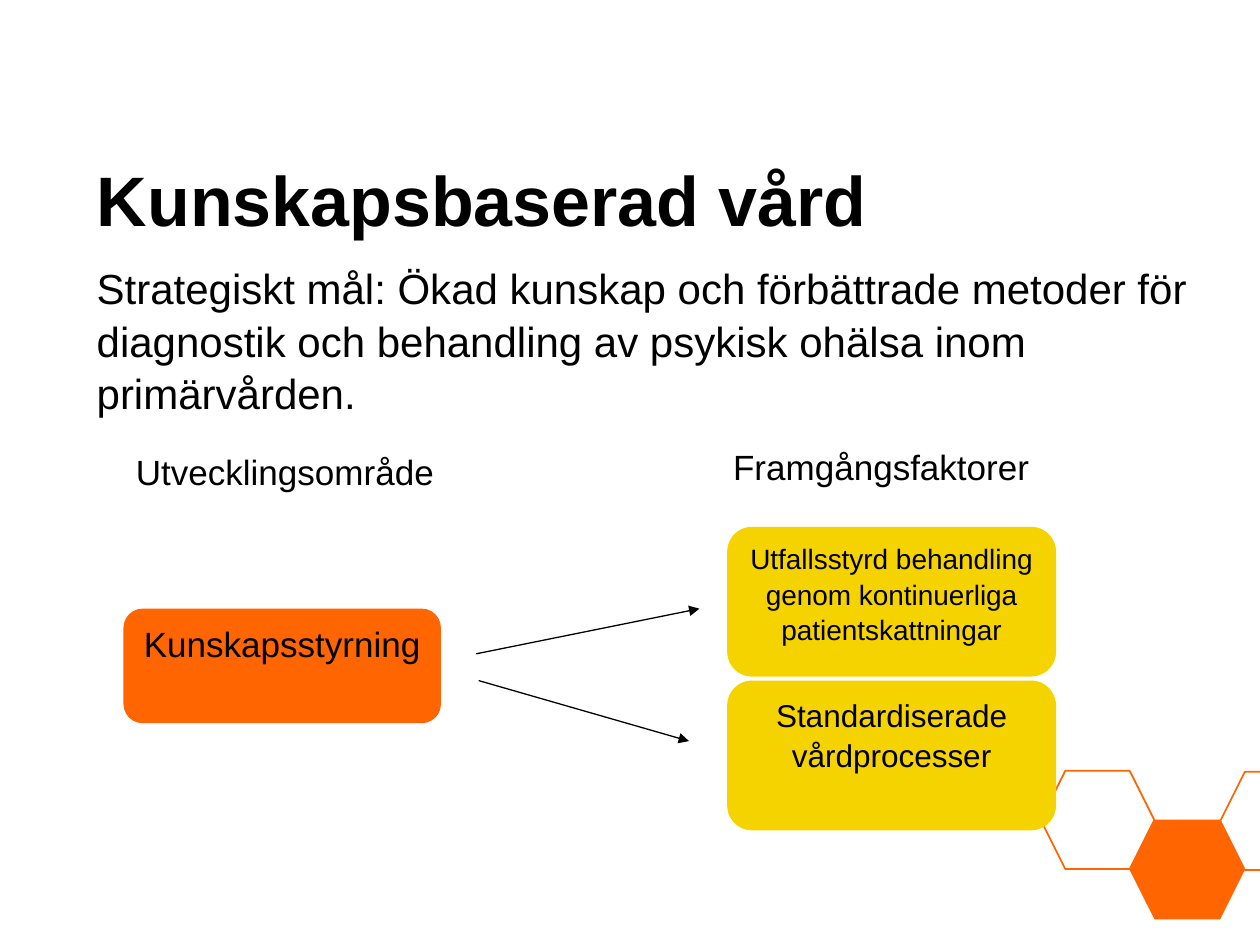
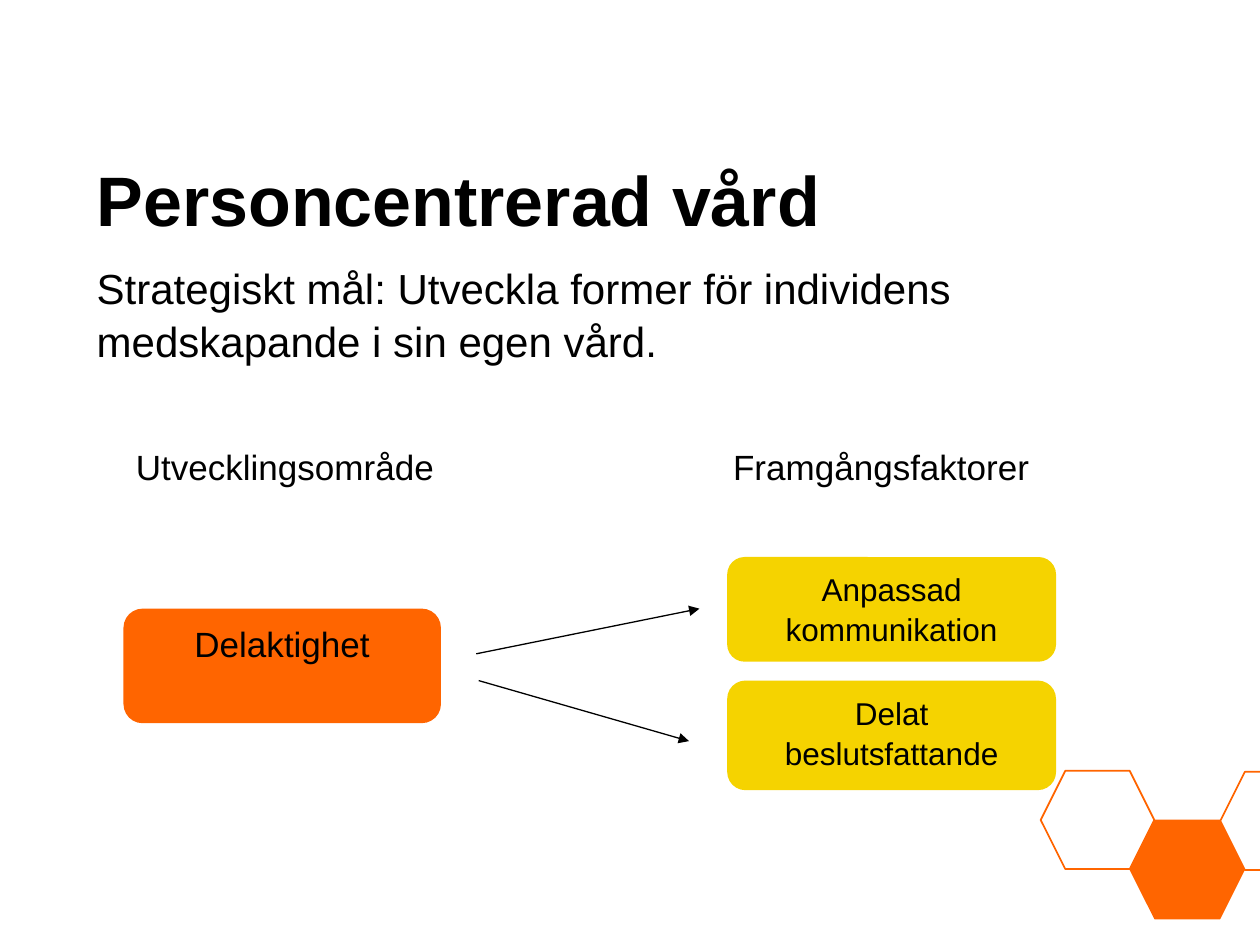
from lxml import etree
from pptx import Presentation
from pptx.dml.color import RGBColor
from pptx.enum.shapes import MSO_CONNECTOR, MSO_SHAPE
from pptx.enum.text import MSO_ANCHOR, MSO_AUTO_SIZE, PP_ALIGN
from pptx.oxml.ns import qn
from pptx.util import Cm, Pt

COLORS = {"orange": "FF6500", "yellow": "F5D300", "white": "FFFFFF", "black": "000000"}
FONT = "Arial"

# Regions: left, top, width, height in cm
TITLE_BOX = (1.7, 2.92, 22.86, 2.16)
GOAL_BOX = (1.7, 5.11, 22.86, 4.37)
DIAGRAM_ORIGIN = (2.49, 8.81)
HONEYCOMB_ORIGIN = (20.98, 15.54)

# Each factor: text, size in points, top within the diagram, height
SLIDES = [
    {
        "title": "Kunskapsbaserad vård",
        "goal": "Strategiskt mål: Ökad kunskap och förbättrade metoder för "
                "diagnostik och behandling av psykisk ohälsa inom primärvården.",
        "area": "Kunskapsstyrning",
        "area_label_drop": 0.1,
        "factors": [
            ("Utfallsstyrd behandling genom kontinuerliga patientskattningar", 16, 1.81, 3.02),
            ("Standardiserade vårdprocesser", 18, 4.91, 3.02),
        ],
    },
    {
        "title": "Personcentrerad vård",
        "goal": "Strategiskt mål: Utveckla former för individens "
                "medskapande i sin egen vård.",
        "area": "Delaktighet",
        "area_label_drop": 0,
        "factors": [
            ("Anpassad kommunikation", 18, 2.42, 2.11),
            ("Delat beslutsfattande", 18, 4.91, 2.21),
        ],
    },
]


def color(name):
    return RGBColor.from_string(COLORS[name])


def write(shape, text, size, align=PP_ALIGN.LEFT, anchor=MSO_ANCHOR.TOP,
          bold=False, spacing=1.05):
    frame = shape.text_frame
    frame.text = text
    frame.word_wrap = True
    frame.auto_size = MSO_AUTO_SIZE.NONE
    frame.vertical_anchor = anchor
    paragraph = frame.paragraphs[0]
    paragraph.alignment = align
    paragraph.line_spacing = spacing
    font = paragraph.runs[0].font
    font.name, font.size, font.bold = FONT, Pt(size), bold
    font.color.rgb = color("black")


def add_label(slide, box, text, size):
    label = slide.shapes.add_textbox(*map(Cm, box))
    write(label, text, size)


def add_filled(slide, kind, box, fill, outline=None):
    shape = slide.shapes.add_shape(kind, *map(Cm, box))
    shape.shadow.inherit = False
    shape.fill.solid()
    shape.fill.fore_color.rgb = color(fill)
    if outline:
        shape.line.color.rgb = color(outline)
        shape.line.width = Pt(1)
    else:
        shape.line.fill.background()
    return shape


def add_card(slide, box, fill, text, size):
    card = add_filled(slide, MSO_SHAPE.ROUNDED_RECTANGLE, box, fill)
    write(card, text, size, PP_ALIGN.CENTER)


def add_arrow(slide, start, end):
    arrow = slide.shapes.add_connector(MSO_CONNECTOR.STRAIGHT, *map(Cm, start + end))
    arrow.line.color.rgb = color("black")
    arrow.line.width = Pt(0.75)
    etree.SubElement(arrow.line._get_or_add_ln(), qn("a:tailEnd"), type="triangle")
    etree.SubElement(arrow._element.spPr, qn("a:effectLst"))


def add_honeycomb(slide, left, top):
    """Three hexagons in the corner, the middle one filled and lower."""
    for column, (fill, drop) in enumerate([("white", 0), ("orange", 1), ("white", 0.02)]):
        box = (left + column * 1.81, top + drop, 2.29, 1.98)
        add_filled(slide, MSO_SHAPE.HEXAGON, box, fill, "orange")


def add_heading(slide, title, goal):
    heading = slide.shapes.title
    heading.left, heading.top, heading.width, heading.height = map(Cm, TITLE_BOX)
    write(heading, title, 40, anchor=MSO_ANCHOR.MIDDLE, bold=True, spacing=1.0)
    add_label(slide, GOAL_BOX, goal, 24)


def add_diagram(slide, left, top, content):
    # Column labels
    add_label(slide, (left, top + content["area_label_drop"], 7.19, 1.12),
              "Utvecklingsområde", 20)
    add_label(slide, (left + 12.04, top, 6.78, 1.12), "Framgångsfaktorer", 20)

    # Development area and its success factors
    add_card(slide, (left, top + 3.46, 6.4, 2.31), "orange", content["area"], 20)
    for text, size, drop, height in content["factors"]:
        add_card(slide, (left + 12.17, top + drop, 6.63, height), "yellow", text, size)

    # Arrows from the area towards the factors
    for x1, y1, x2, y2 in [(7.11, 4.37, 11.61, 3.46), (7.16, 4.91, 11.4, 6.13)]:
        add_arrow(slide, (left + x1, top + y1), (left + x2, top + y2))


def add_goal_slide(deck, content):
    slide = deck.slides.add_slide(deck.slide_layouts.get_by_name("Title Only"))
    add_honeycomb(slide, *HONEYCOMB_ORIGIN)
    add_heading(slide, content["title"], content["goal"])
    add_diagram(slide, *DIAGRAM_ORIGIN, content)


def main():
    deck = Presentation()
    deck.slide_width, deck.slide_height = Cm(25.4), Cm(19.05)
    for content in SLIDES:
        add_goal_slide(deck, content)
    deck.save("out.pptx")


if __name__ == "__main__":
    main()
